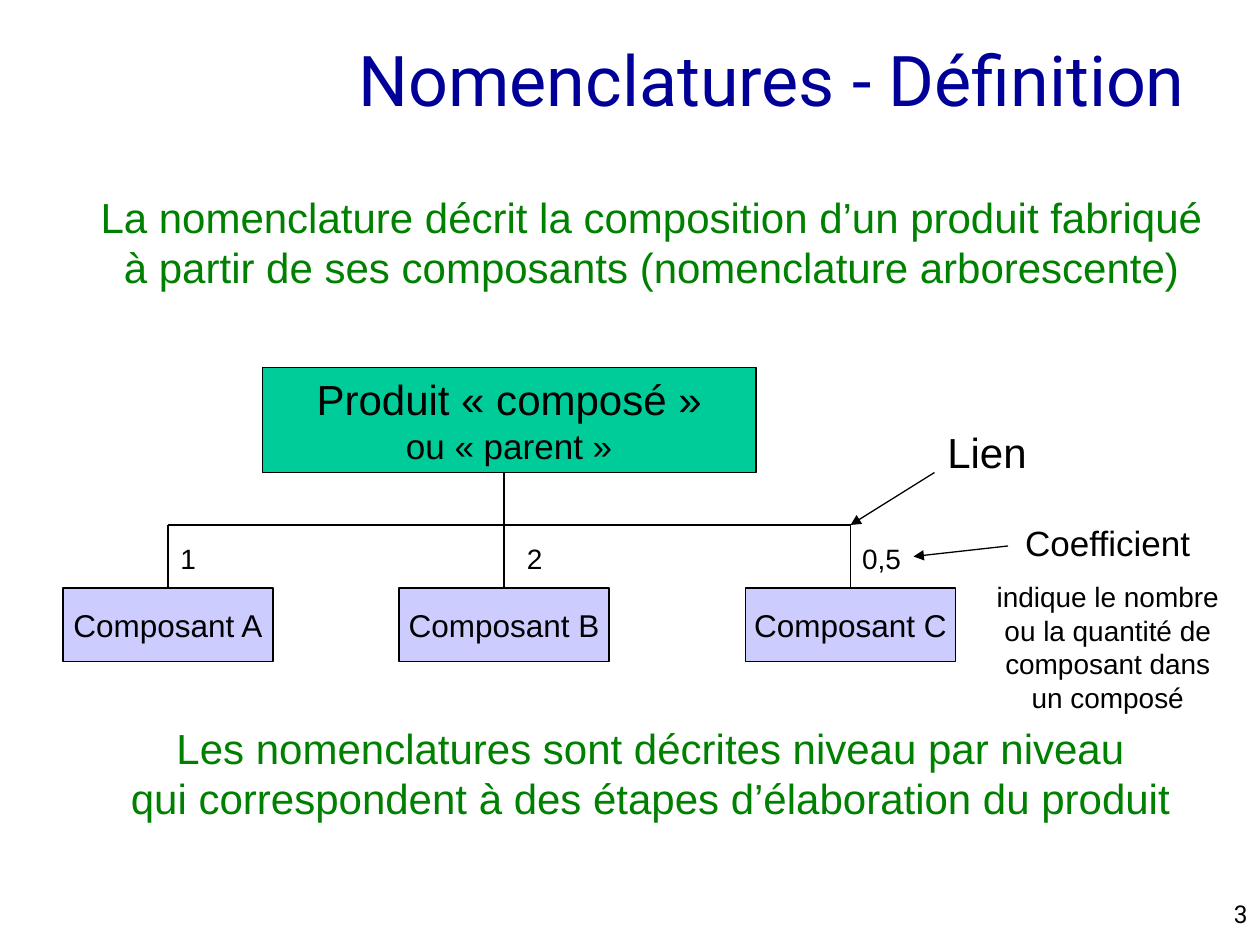
import pptx
import pptx.dml.color
import pptx.enum.shapes
import pptx.enum.text
import pptx.oxml
import pptx.oxml.ns
import pptx.util

RGBColor = pptx.dml.color.RGBColor
BLACK = RGBColor(0x00, 0x00, 0x00)
NAVY = RGBColor(0x00, 0x00, 0x99)
GREEN = RGBColor(0x00, 0x80, 0x00)
TEAL = RGBColor(0x00, 0xCC, 0x99)
LILAC = RGBColor(0xCC, 0xCC, 0xFF)

ALIGN = pptx.enum.text.PP_ALIGN
ANCHOR = pptx.enum.text.MSO_ANCHOR
COLS, ROWS = 120, 90
CELL = pptx.util.Inches(10) // COLS

COMPONENTS = [
    ("Composant A", 6, 16, "1", 16, 3.8),
    ("Composant B", 38, 48, "2", 49, 3.8),
    ("Composant C", 71, 81, "0,5", 80.9, 6.1),
]
BUS_ROW, COMPONENT_ROW = 50, 56


def grid(*cells):
    return [round(c * CELL) for c in cells]


def write(sp, lines, color=BLACK, font="Arial", align=ALIGN.CENTER,
          anchor=ANCHOR.MIDDLE, wrap=False, gap=0):
    tf = sp.text_frame
    tf.word_wrap = wrap
    tf.vertical_anchor = anchor
    for i, (text, size) in enumerate(lines):
        p = tf.add_paragraph() if i else tf.paragraphs[0]
        p.text = text
        p.alignment = align
        p.space_before = pptx.util.Pt(gap if i else 0)
        p.font.name = font
        p.font.size = pptx.util.Pt(size)
        p.font.color.rgb = color


def add_text(s, box, lines, **style):
    write(s.shapes.add_textbox(*grid(*box)), lines, **style)


def add_box(s, box, lines, fill):
    sp = s.shapes.add_shape(pptx.enum.shapes.MSO_SHAPE.RECTANGLE, *grid(*box))
    sp.shadow.inherit = False
    sp.fill.solid()
    sp.fill.fore_color.rgb = fill
    sp.line.color.rgb = BLACK
    sp.line.width = pptx.util.Pt(0.75)
    write(sp, lines)


def add_line(s, start, end, arrow=False):
    cx = s.shapes.add_connector(
        pptx.enum.shapes.MSO_CONNECTOR.STRAIGHT, *grid(*start, *end))
    cx.line.color.rgb = BLACK
    cx.line.width = pptx.util.Pt(0.75)
    if arrow:
        ns = pptx.oxml.ns.nsdecls("a")
        cx.line._get_or_add_ln().append(
            pptx.oxml.parse_xml(f'<a:tailEnd {ns} type="triangle"/>'))
    cx._element.spPr.append(
        pptx.oxml.parse_xml(f'<a:effectLst {pptx.oxml.ns.nsdecls("a")}/>'))


def add_tree(s):
    add_box(s, (25, 35, 47, 10),
            [("Produit «\u00a0composé\u00a0»", 24), ("ou «\u00a0parent\u00a0»", 20)], TEAL)
    stems = [stem for _, _, stem, *_ in COMPONENTS]
    add_line(s, (stems[0], BUS_ROW), (stems[-1], BUS_ROW))
    add_line(s, (stems[1], 45), (stems[1], BUS_ROW))
    for name, left, stem, coefficient, label_left, label_width in COMPONENTS:
        add_line(s, (stem, BUS_ROW), (stem, COMPONENT_ROW))
        add_box(s, (left, COMPONENT_ROW, 20, 7), [(name, 18)], LILAC)
        add_text(s, (label_left, 51, label_width, 4.4), [(coefficient, 16)])


def add_legend(s):
    add_text(s, (89, 40, 10, 6), [("Lien", 24)])
    add_line(s, (89, 45), (81, BUS_ROW), arrow=True)
    add_text(s, (93, 49, 25, 19.7),
             [("Coefficient", 20),
              ("indique le nombre ou la quantité de composant dans un composé", 16)],
             wrap=True, gap=9)
    add_line(s, (96, 52), (87, 53), arrow=True)


def main():
    prs = pptx.Presentation()
    prs.slide_width, prs.slide_height = grid(COLS, ROWS)
    s = prs.slides.add_slide(prs.slide_layouts[6])
    add_text(s, (4, 0, 110, 15), [("Nomenclatures - Définition", 40)],
             color=NAVY, font="Roboto", align=ALIGN.RIGHT, wrap=True)
    add_text(s, (8.3, 17.6, 107.5, 10.8),
             [("La nomenclature décrit la composition d’un produit fabriqué\n"
               "à partir de ses composants (nomenclature arborescente)", 24)],
             color=GREEN)
    add_tree(s)
    add_legend(s)
    add_text(s, (11.2, 68.2, 101.5, 10.8),
             [("Les nomenclatures sont décrites niveau par niveau\n"
               "qui correspondent à des étapes d’élaboration du produit", 24)],
             color=GREEN)
    add_text(s, (95, 85, 25, 3), [("3", 14)], font="Roboto",
             align=ALIGN.RIGHT, anchor=ANCHOR.TOP, wrap=True)
    prs.save("out.pptx")


if __name__ == "__main__":
    main()
